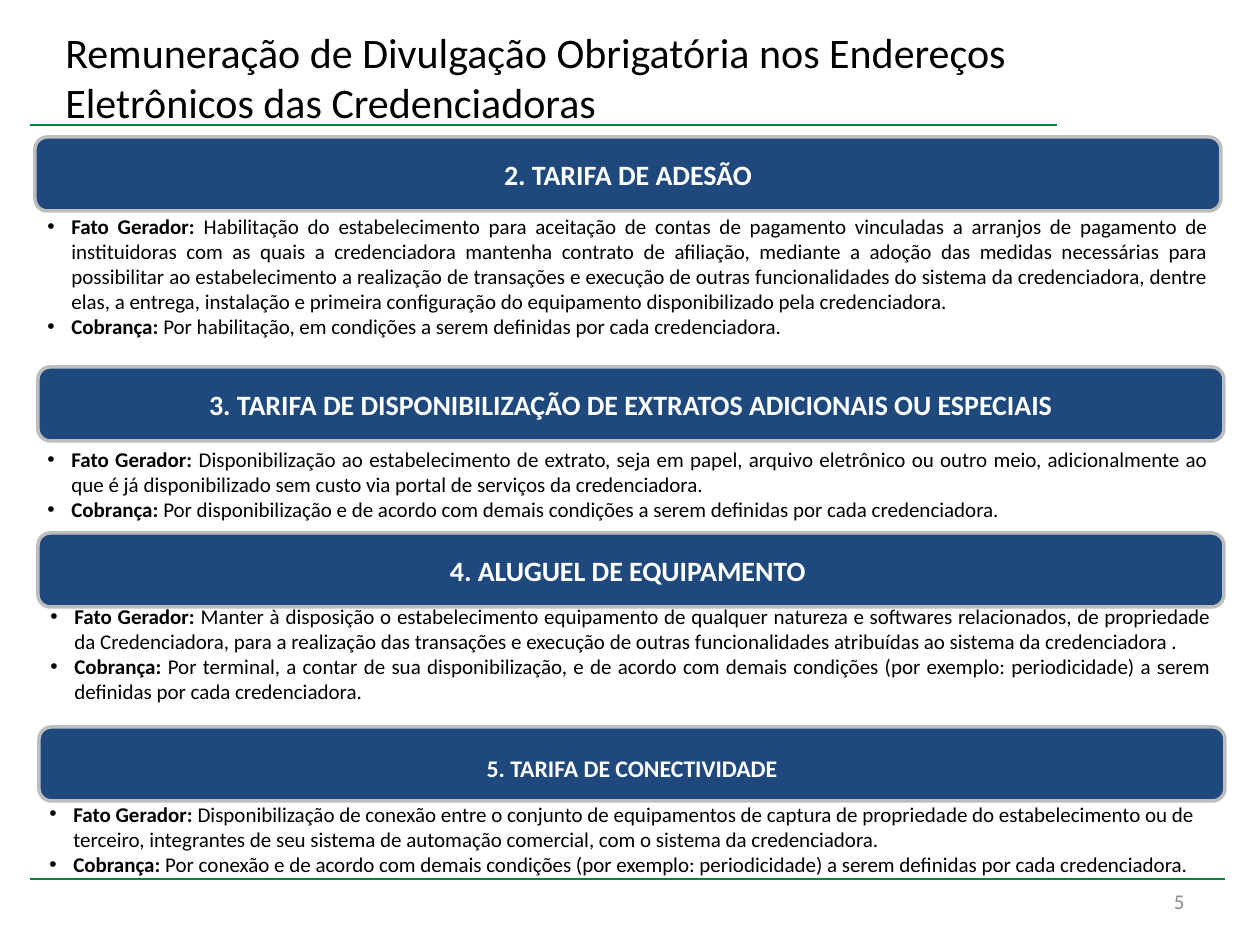
from lxml.etree import SubElement
from pptx import Presentation
from pptx.dml.color import RGBColor
from pptx.enum.shapes import MSO_CONNECTOR as Connector, MSO_SHAPE as Shape
from pptx.enum.text import MSO_ANCHOR as Anchor, PP_ALIGN as Align
from pptx.oxml.ns import qn
from pptx.util import Emu, Pt

NAVY = RGBColor(0x1F, 0x49, 0x7D)
SILVER = RGBColor(0xBD, 0xBD, 0xBD)
GREEN = RGBColor(0x00, 0x84, 0x3C)
GREY = RGBColor(0x8C, 0x8C, 0x8C)
BLACK = RGBColor(0, 0, 0)
WHITE = RGBColor(255, 255, 255)
FONT = "Calibri"
PX = 914400 / 126

TITLE = "Remuneração de Divulgação Obrigatória nos Endereços Eletrônicos das Credenciadoras"
PAGE_NUMBER = "5"
RULES = [(30, 125, 1057), (30, 879, 1225)]
BAR_WIDTH, BAR_HEIGHT = 1186, 74
LABELS = ("Fato Gerador: ", "Cobrança: ")

SECTIONS = [
    dict(
        heading="2. TARIFA DE ADESÃO", size=16, bar=(35, 137), body=(35, 207, 140),
        aligns=(Align.JUSTIFY, Align.LEFT),
        texts=(
            "Habilitação do estabelecimento para aceitação de contas de pagamento vinculadas a arranjos "
            "de pagamento de instituidoras com as quais a credenciadora mantenha contrato de afiliação, "
            "mediante a adoção das medidas necessárias para possibilitar ao estabelecimento a realização "
            "de transações e execução de outras funcionalidades do sistema da credenciadora, dentre elas, "
            "a entrega, instalação e primeira configuração do equipamento disponibilizado pela credenciadora. ",
            "Por habilitação, em condições a serem definidas por cada credenciadora.",
        ),
    ),
    dict(
        heading="3. TARIFA DE DISPONIBILIZAÇÃO DE EXTRATOS ADICIONAIS OU ESPECIAIS",
        size=16, bar=(38, 367), body=(35, 440, 89),
        aligns=(Align.JUSTIFY, Align.JUSTIFY),
        texts=(
            "Disponibilização ao estabelecimento de extrato, seja em papel, arquivo eletrônico ou outro "
            "meio, adicionalmente ao que é já disponibilizado sem custo via portal de serviços da credenciadora.",
            "Por disponibilização e de acordo com demais condições a serem definidas por cada credenciadora.",
        ),
    ),
    dict(
        heading="4. ALUGUEL DE EQUIPAMENTO ", size=16, bar=(38, 533), body=(38, 597, 115),
        aligns=(Align.JUSTIFY, Align.JUSTIFY),
        texts=(
            "Manter à disposição o estabelecimento equipamento de qualquer natureza e softwares "
            "relacionados, de propriedade da Credenciadora, para a realização das transações e execução "
            "de outras funcionalidades atribuídas ao sistema da credenciadora .",
            "Por terminal, a contar de sua disponibilização, e de acordo com demais condições (por "
            "exemplo: periodicidade) a serem definidas por cada credenciadora.",
        ),
    ),
    dict(
        heading="5. TARIFA DE CONECTIVIDADE", size=13.6, bar=(39, 727), body=(37, 795, 89), drop=8,
        aligns=(Align.LEFT, Align.JUSTIFY),
        texts=(
            "Disponibilização de conexão entre o conjunto de equipamentos de captura de propriedade do "
            "estabelecimento ou de terceiro, integrantes de seu sistema de automação comercial, com o "
            "sistema da credenciadora.",
            "Por conexão e de acordo com demais condições (por exemplo: periodicidade) a serem definidas "
            "por cada credenciadora. ",
        ),
    ),
]


def px(*lengths):
    return [Emu(round(length * PX)) for length in lengths]


def write(para, text, size=12, color=BLACK, bold=False, align=Align.LEFT):
    para.alignment = align
    span = para.add_run()
    span.text = text
    span.font.name = FONT
    span.font.size = Pt(size)
    span.font.bold = bold
    span.font.color.rgb = color


def add_box(page, left, top, width, height):
    box = page.shapes.add_textbox(*px(left, top, width, height))
    box.text_frame.word_wrap = True
    return box.text_frame


def add_rule(page, left, top, right):
    rule = page.shapes.add_connector(Connector.STRAIGHT, *px(left, top, right, top))
    rule.line.color.rgb = GREEN
    rule.line.width = Pt(0.75)
    SubElement(rule._element.spPr, qn("a:effectLst"))


def add_bar(page, section):
    bar = page.shapes.add_shape(Shape.ROUNDED_RECTANGLE, *px(*section["bar"], BAR_WIDTH, BAR_HEIGHT))
    bar.shadow.inherit = False
    bar.fill.solid()
    bar.fill.fore_color.rgb = NAVY
    bar.line.color.rgb = SILVER
    bar.line.width = Pt(2)
    frame = bar.text_frame
    frame.word_wrap = True
    frame.vertical_anchor = Anchor.MIDDLE
    frame.margin_top += px(section.get("drop", 0))[0]
    write(frame.paragraphs[0], section["heading"], size=section["size"],
          color=WHITE, bold=True, align=Align.CENTER)


def add_bullet(para):
    props = para._p.get_or_add_pPr()
    indent = px(24)[0]
    props.set("marL", str(indent))
    props.set("indent", str(-indent))
    SubElement(props, qn("a:buFont"), typeface="Arial")
    SubElement(props, qn("a:buChar"), char="•")


def add_body(page, section):
    left, top, height = section["body"]
    frame = add_box(page, left, top, BAR_WIDTH, height)
    for i, (label, text, align) in enumerate(zip(LABELS, section["texts"], section["aligns"])):
        para = frame.add_paragraph() if i else frame.paragraphs[0]
        add_bullet(para)
        write(para, label, bold=True, align=align)
        write(para, text, align=align)


def main():
    deck = Presentation()
    deck.slide_width, deck.slide_height = px(1260, 945)
    page = deck.slides.add_slide(deck.slide_layouts[6])
    for rule in RULES:
        add_rule(page, *rule)
    number = add_box(page, 903, 876, 294, 50)
    number.vertical_anchor = Anchor.MIDDLE
    write(number.paragraphs[0], PAGE_NUMBER, color=GREY, align=Align.RIGHT)
    write(add_box(page, 53, 20, 1011, 115).paragraphs[0], TITLE, size=24)
    for section in SECTIONS:
        add_bar(page, section)
        add_body(page, section)
    deck.save("out.pptx")


if __name__ == "__main__":
    main()
